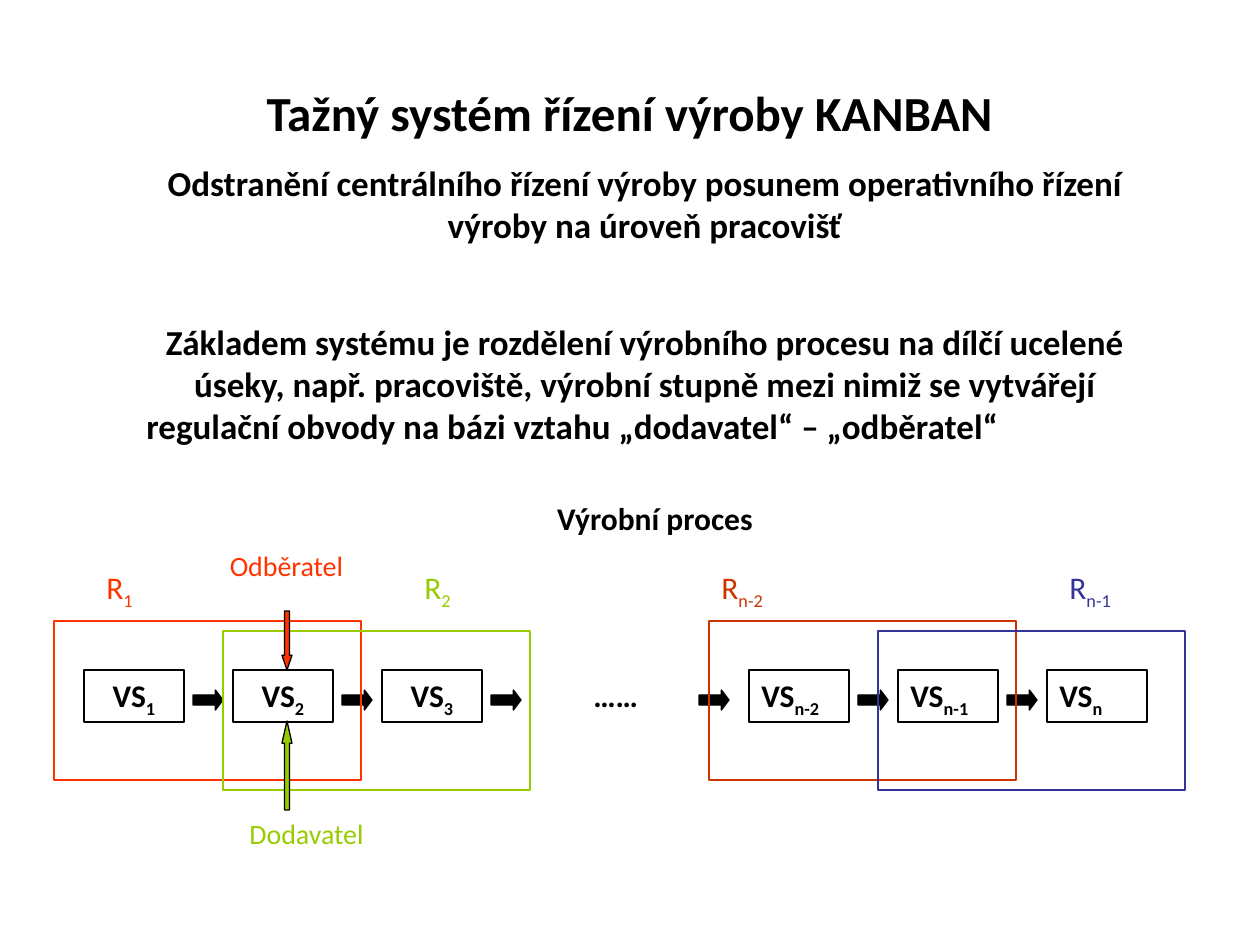
from pptx import Presentation
from pptx.dml.color import RGBColor
from pptx.enum.shapes import MSO_SHAPE
from pptx.enum.text import MSO_ANCHOR, PP_ALIGN
from pptx.util import Emu, Pt

RECT = MSO_SHAPE.RECTANGLE
RIGHT, DOWN, UP = MSO_SHAPE.RIGHT_ARROW, MSO_SHAPE.DOWN_ARROW, MSO_SHAPE.UP_ARROW
CENTER, LEFT = PP_ALIGN.CENTER, PP_ALIGN.LEFT
TOP = MSO_ANCHOR.TOP
SCALE = 914400 / 126
FONT = "Calibri"
COLORS = {"black": "000000", "white": "FFFFFF", "red": "FF3300",
          "green": "99CC00", "rust": "CC3300", "blue": "333399"}
STEP = 149  # from one stage to the next
STAGE_W, STAGE_H = 100, 52
LOOP_W, LOOP_H = 307, 159


def px(n):
    return Emu(round(n * SCALE))


def color(name):
    return RGBColor.from_string(COLORS[name])


def write(shape, lines, size, ink="black", bold=True, align=CENTER):
    """Fill a shape with lines, each a (text, subscript) pair."""
    frame = shape.text_frame
    frame.word_wrap = True
    frame.vertical_anchor = TOP
    for i, (text, sub) in enumerate(lines):
        para = frame.add_paragraph() if i else frame.paragraphs[0]
        para.alignment = align
        font = para.font
        font.name, font.size, font.bold = FONT, Pt(size), bold
        font.color.rgb = color(ink)
        para.add_run().text = text
        if sub:
            run = para.add_run()
            run.text = sub
            run.font._element.set("baseline", "-25000")
    return frame


def add_text(slide, box, text, size, sub="", **style):
    shape = slide.shapes.add_textbox(*map(px, box))
    return write(shape, [(text, sub)], size, **style)


def add_shape(slide, kind, box, fill=None, line="black"):
    shape = slide.shapes.add_shape(kind, *map(px, box))
    shape.shadow.inherit = False
    if fill:
        shape.fill.solid()
        shape.fill.fore_color.rgb = color(fill)
    else:
        shape.fill.background()
    shape.line.color.rgb = color(line)
    shape.line.width = Pt(0.75)
    return shape


def add_arrow(slide, kind, box, fill, head):
    arrow = add_shape(slide, kind, box, fill)
    arrow.adjustments[0] = 0.5
    arrow.adjustments[1] = head


def add_intro(slide, x, y):
    add_text(slide, (x - 60, y, 1111, 72), "Tažný systém řízení výroby KANBAN", 28)
    add_text(slide, (x, y + 79, 1022, 97),
             "Odstranění centrálního řízení výroby posunem operativního řízení "
             "výroby na úroveň pracovišť", 20)
    frame = add_text(slide, (x, y + 238, 1022, 140),
                     "Základem systému je rozdělení výrobního procesu na dílčí ucelené "
                     "úseky, např. pracoviště, výrobní stupně mezi nimiž se vytvářejí", 20)
    last = frame.add_paragraph()
    last.text = "regulační obvody na bázi vztahu „dodavatel“ – „odběratel“"
    last.alignment = LEFT
    last.font.name, last.font.size, last.font.bold = FONT, Pt(20), True
    last.font.color.rgb = color("black")


def add_chain(slide, x, y, inset, stages, arrows, loops, align):
    """Draw three stages, the arrows between them and two overlapping loops."""
    first, top = x + inset, y + 49
    for i, sub in enumerate(stages):
        box = (first + i * STEP, top, STAGE_W, STAGE_H)
        stage = add_shape(slide, RECT, box, "white")
        write(stage, [("VS", sub)], 18, align=align)
    for left in arrows:
        add_arrow(slide, RIGHT, (first + left, top + 20, 30, 20), "black", 0.38)
    for i, (sub, ink, left) in enumerate(loops):
        add_shape(slide, RECT, (x + i * 169, y + i * 10, LOOP_W, LOOP_H), line=ink)
        add_text(slide, (x + left, y - 59, 100, 50), "R", 18, sub,
                 ink=ink, bold=False, align=LEFT)


def add_roles(slide, x, y):
    """Label the customer above and the supplier below a stage's top centre."""
    add_text(slide, (x - 75, y - 128, 149, 47), "Odběratel", 16, ink="red", bold=False)
    add_text(slide, (x - 65, y + 140, 169, 47), "Dodavatel", 16, ink="green", bold=False)
    add_arrow(slide, DOWN, (x - 5, y - 59, 10, 59), "red", 1.48)
    add_arrow(slide, UP, (x - 5, y + 51, 10, 89), "green", 2.22)


def main():
    deck = Presentation()
    deck.slide_width, deck.slide_height = px(1260), px(945)
    slide = deck.slides.add_slide(deck.slide_layouts[6])
    add_intro(slide, 134, 76)
    add_text(slide, (422, 493, 466, 50), "Výrobní proces", 18)
    add_chain(slide, 54, 621, 30, ("1", "2", "3"), (109, 109 + STEP, 109 + 2 * STEP),
              (("1", "red", 40), ("2", "green", 358)), CENTER)
    add_chain(slide, 709, 621, 40, ("n-2", "n-1", "n"), (-50, 109, 109 + STEP),
              (("n-2", "rust", 0), ("n-1", "blue", 348)), LEFT)
    add_text(slide, (581, 670, 89, 50), "……", 18, align=LEFT)
    add_roles(slide, 287, 670)
    deck.save("out.pptx")


if __name__ == "__main__":
    main()
